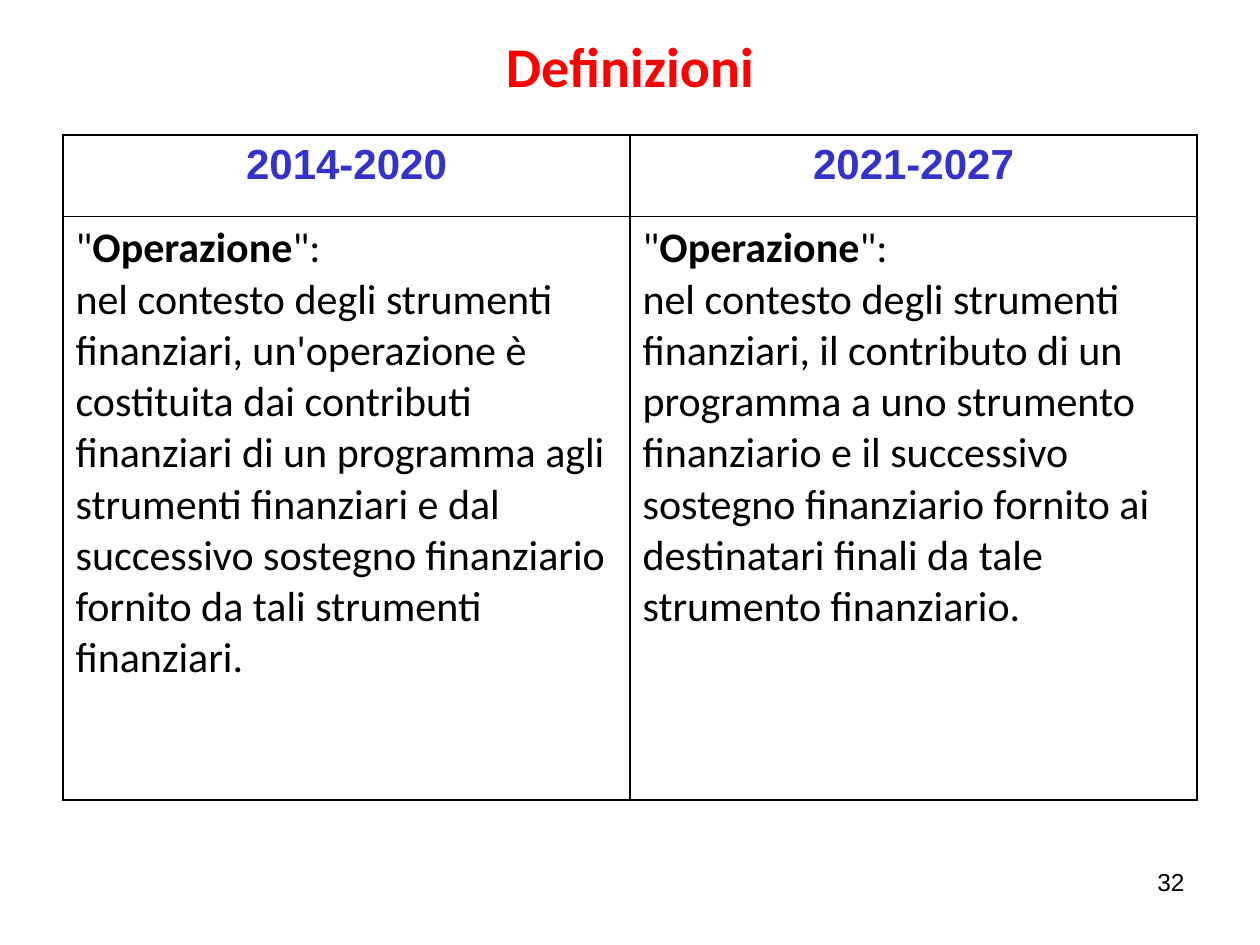
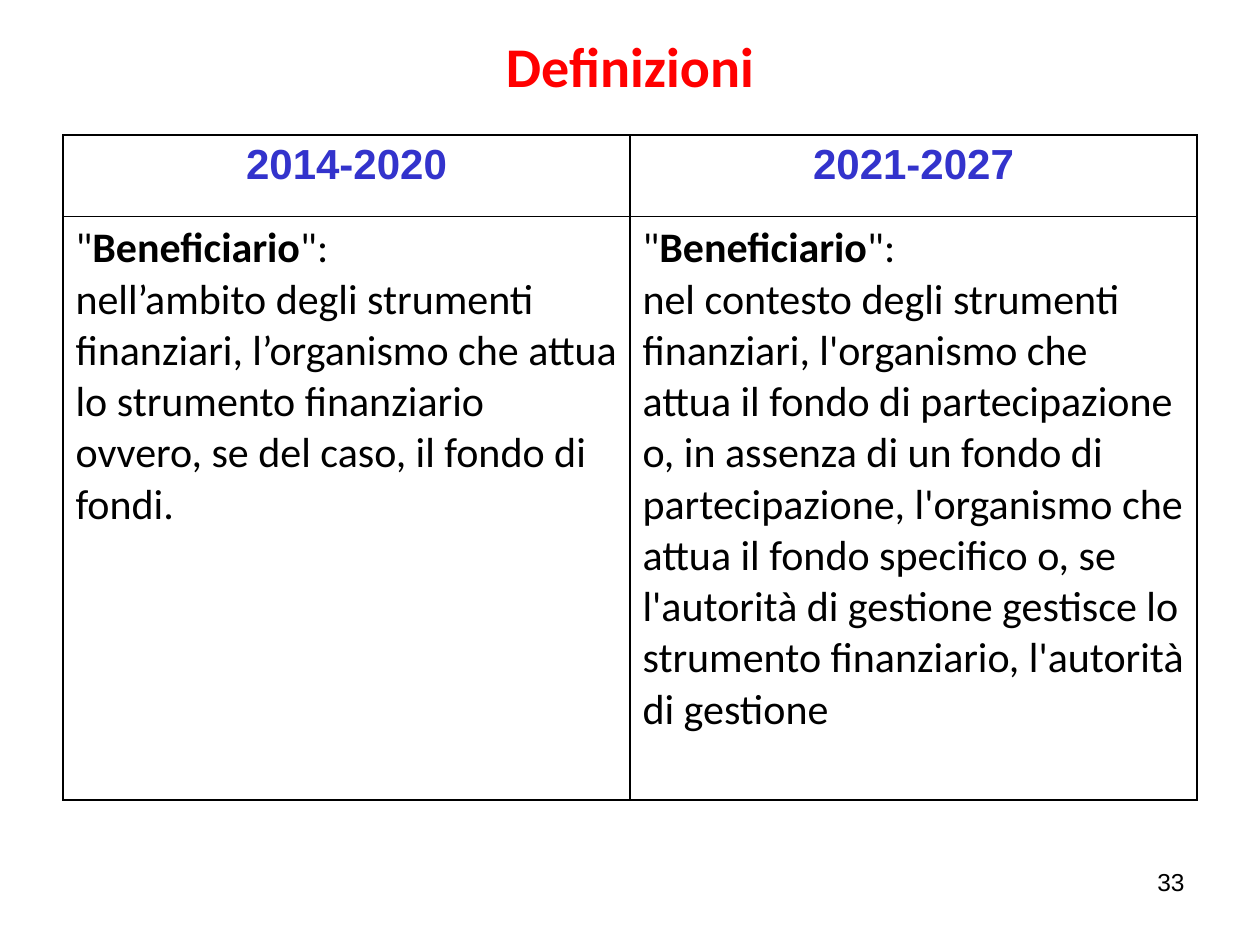
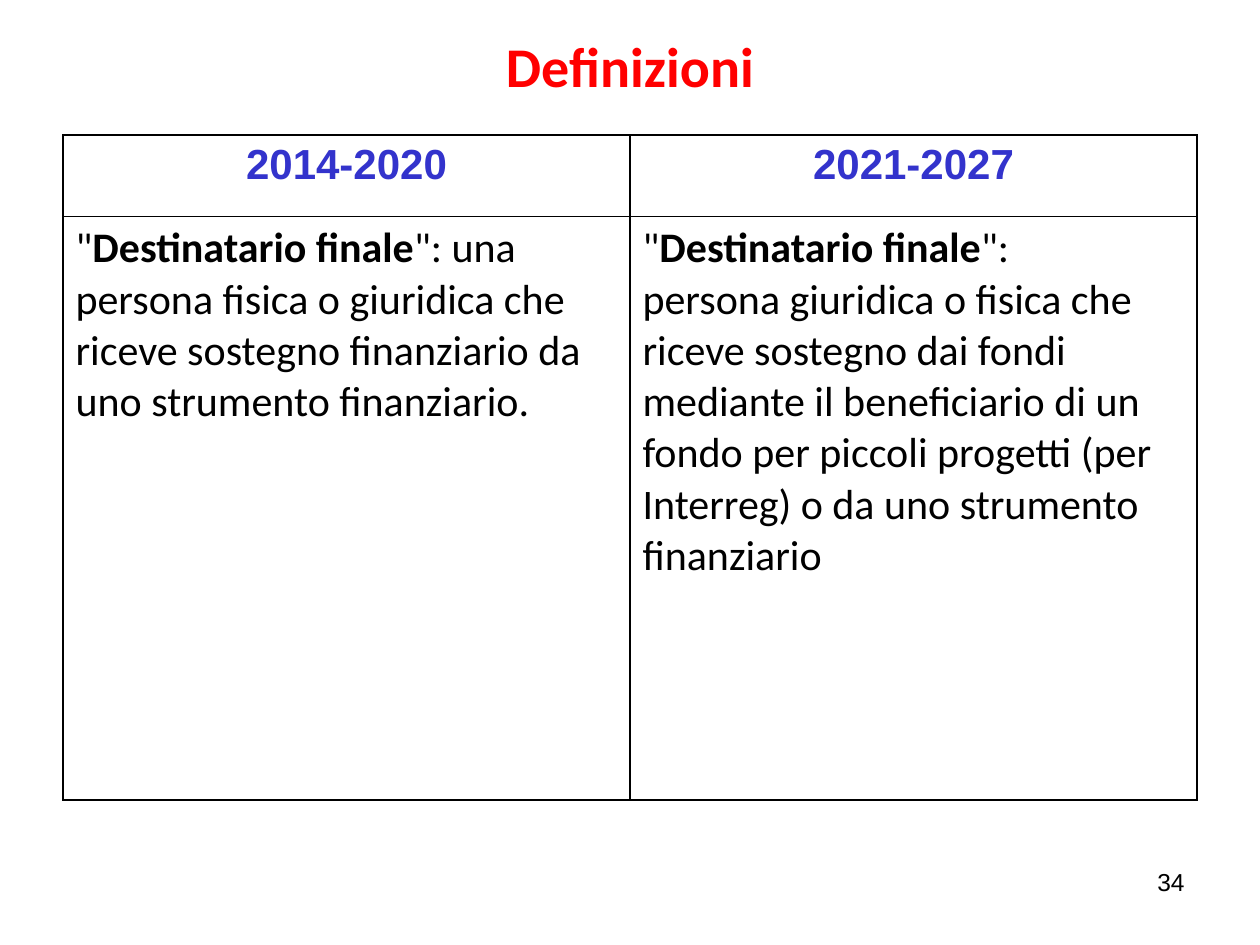
"""Build three slides that compare definitions across two programming periods."""
from lxml.etree import SubElement
from pptx import Presentation
from pptx.dml.color import RGBColor as RGB
from pptx.enum.text import MSO_ANCHOR as Anchor, PP_ALIGN as Align
from pptx.oxml.ns import qn
from pptx.util import Inches, Pt

COLORS = {"title": "FF0000", "head": "3333CC", "text": "000000",
          "line": "000000", "back": "FFFFFF"}
STYLES = {
    "title": {"name": "Calibri", "size": Pt(32), "bold": True},
    "head": {"name": "Arial", "size": Pt(24), "bold": True},
    "text": {"name": "Calibri", "size": Pt(24), "bold": False},
    "page": {"name": "Arial", "size": Pt(14), "bold": False},
}
PERIODS = ["2014-2020", "2021-2027"]
FIRST = 32
TERMS = [
    ("Operazione", [
        ["\": ", "nel contesto degli strumenti finanziari, un'operazione è costituita "
         "dai contributi finanziari di un programma agli strumenti finanziari e dal "
         "successivo sostegno finanziario fornito da tali strumenti finanziari."],
        ["\":", "nel contesto degli strumenti finanziari, il contributo di un programma "
         "a uno strumento finanziario e il successivo sostegno finanziario fornito ai "
         "destinatari finali da tale strumento finanziario."]]),
    ("Beneficiario", [
        ["\": ", "nell’ambito degli strumenti finanziari, l’organismo che attua lo "
         "strumento finanziario ovvero, se del caso, il fondo di fondi."],
        ["\":", "nel contesto degli strumenti finanziari, l'organismo che attua il fondo "
         "di partecipazione o, in assenza di un fondo di partecipazione, l'organismo che "
         "attua il fondo specifico o, se l'autorità di gestione gestisce lo strumento "
         "finanziario, l'autorità di gestione"]]),
    ("Destinatario finale", [
        ["\": una persona fisica o giuridica che riceve sostegno finanziario da uno "
         "strumento finanziario."],
        ["\":", "persona giuridica o fisica che riceve sostegno dai fondi mediante il "
         "beneficiario di un fondo per piccoli progetti (per Interreg) o da uno "
         "strumento finanziario"]]),
]


class Deck:
    def __init__(self):
        self.prs = Presentation()
        self.prs.slide_width, self.prs.slide_height = Inches(10), Inches(7.5)
        self.slide = None

    def add(self):
        self.slide = self.prs.slides.add_slide(self.prs.slide_layouts[5])
        fill = self.slide.background.fill
        fill.solid()
        fill.fore_color.rgb = RGB.from_string(COLORS["back"])

    def put(self, para, text, style, **extra):
        run = para.add_run()
        run.text = text
        for key, value in {**STYLES[style], **extra}.items():
            setattr(run.font, key, value)
        color = COLORS.get(style, COLORS["text"])
        run.font.color.rgb = RGB.from_string(color)

    def title(self, text):
        box = self.slide.shapes.title
        box.left, box.top = Inches(0.5), Inches(0.13)
        box.width, box.height = Inches(9), Inches(0.77)
        box.text_frame.vertical_anchor = Anchor.MIDDLE
        para = box.text_frame.paragraphs[0]
        para.alignment = Align.CENTER
        self.put(para, text, "title")

    def page(self, num):
        box = self.slide.shapes.add_textbox(
            Inches(7.17), Inches(6.83), Inches(2.33), Inches(0.52))
        box.text_frame.word_wrap = True
        para = box.text_frame.paragraphs[0]
        para.alignment = Align.RIGHT
        self.put(para, str(num), "page")

    def cell(self, cell):
        props = cell._tc.get_or_add_tcPr()
        for side in ("a:lnL", "a:lnR", "a:lnT", "a:lnB"):
            line = SubElement(props, qn(side), w=str(Pt(1)))
            solid = SubElement(line, qn("a:solidFill"))
            SubElement(solid, qn("a:srgbClr"), val=COLORS["line"])
        cell.fill.solid()
        cell.fill.fore_color.rgb = RGB.from_string(COLORS["back"])
        return cell.text_frame

    def table(self, term, texts):
        grid = self.slide.shapes.add_table(
            2, len(PERIODS), Inches(0.5), Inches(1.07), Inches(9), Inches(5.28)).table
        for row, high in zip(grid.rows, (0.65, 4.63)):
            row.height = Inches(high)
        for col, (span, (tail, *rest)) in enumerate(zip(PERIODS, texts)):
            head = self.cell(grid.cell(0, col)).paragraphs[0]
            head.alignment = Align.CENTER
            self.put(head, span, "head")
            body = self.cell(grid.cell(1, col))
            lead = body.paragraphs[0]
            if col == 0 and rest:
                lead.alignment = Align.JUSTIFY
            self.put(lead, "\"", "text")
            self.put(lead, term, "text", bold=True)
            self.put(lead, tail, "text")
            for text in rest:
                self.put(body.add_paragraph(), text, "text")


def main():
    deck = Deck()
    for num, (term, texts) in enumerate(TERMS, FIRST):
        deck.add()
        deck.title("Definizioni")
        deck.page(num)
        deck.table(term, texts)
    deck.prs.save("out.pptx")


if __name__ == "__main__":
    main()
